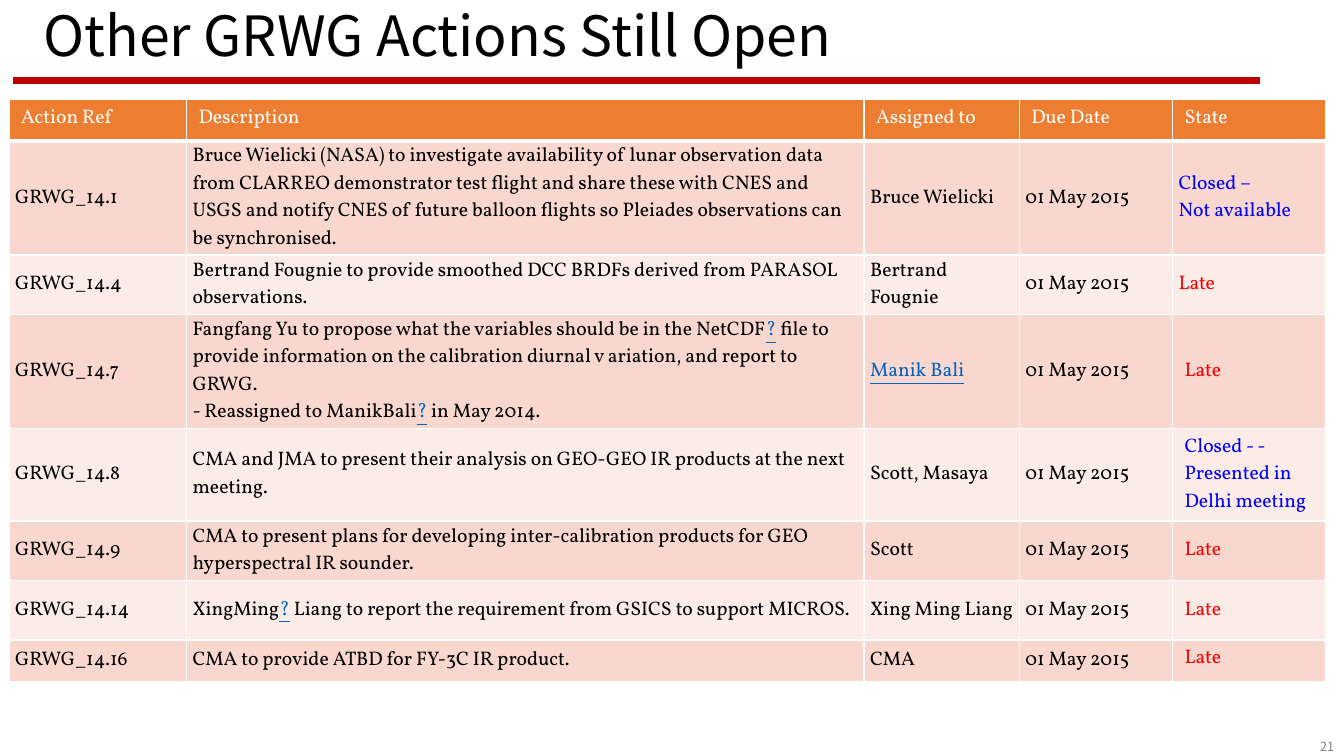
from lxml import etree
from pptx import Presentation
from pptx.dml.color import RGBColor
from pptx.enum.shapes import MSO_CONNECTOR
from pptx.enum.text import MSO_ANCHOR, PP_ALIGN
from pptx.oxml.ns import qn
from pptx.util import Inches, Pt

COLORS = {
    "white": "FFFFFF", "black": "000000", "rule": "C00000", "number": "808080",
    "header": "ED7D31", "odd": "F8D7CE", "even": "FCECE8",
    "link": "0563C1", "closed": "0000FF", "late": "FF0000",
}
SANS, SERIF = "Noto Sans CJK KR", "Vollkorn"
DUE = "01 May 2015"
COLUMN_WIDTHS = [1.76, 6.72, 1.54, 1.52, 1.52]
ROW_HEIGHTS = [0.41, 1.13, 0.59, 1.13, 0.92, 0.59, 0.59, 0.41]
ACTIONS = [
    ("Action Ref", "Description", "Assigned to", "Due Date", "State"),
    ("GRWG_14.1",
     "Bruce Wielicki (NASA) to investigate availability of lunar observation data "
     "from CLARREO demonstrator test flight and share these with CNES and USGS and "
     "notify CNES of future balloon flights so Pleiades observations can be synchronised.",
     "Bruce Wielicki", DUE, "Closed –\nNot available"),
    ("GRWG_14.4",
     "Bertrand Fougnie to provide smoothed DCC BRDFs derived from PARASOL observations.",
     "Bertrand Fougnie", DUE, "Late"),
    ("GRWG_14.7",
     "Fangfang Yu to propose what the variables should be in the NetCDF? file to "
     "provide information on the calibration diurnal v ariation, and report to GRWG. \v"
     "- Reassigned to ManikBali? in May 2014.",
     "Manik Bali", DUE, "Late"),
    ("GRWG_14.8",
     "CMA and JMA to present their analysis on GEO-GEO IR products at the next meeting.",
     "Scott, Masaya", DUE, "Closed - - Presented in Delhi meeting"),
    ("GRWG_14.9",
     "CMA to present plans for developing inter-calibration products for GEO "
     "hyperspectral IR sounder.",
     "Scott", DUE, "Late"),
    ("GRWG_14.14",
     "XingMing? Liang to report the requirement from GSICS to support MICROS.",
     "Xing Ming Liang", DUE, "Late"),
    ("GRWG_14.16", "CMA to provide ATBD for FY-3C IR product.", "CMA", DUE, "Late"),
]


def style(font, name, size, color):
    font.name = name
    font.size = Pt(size)
    font.bold = False
    font.color.rgb = RGBColor.from_string(COLORS[color])


def add_borders(cell, bottom_width):
    properties = cell._tc.get_or_add_tcPr()
    for side, width in (("L", 1), ("R", 1), ("T", 1), ("B", bottom_width)):
        border = etree.SubElement(properties, qn(f"a:ln{side}"), w=str(Pt(width)))
        fill = etree.SubElement(border, qn("a:solidFill"))
        etree.SubElement(fill, qn("a:srgbClr"), val=COLORS["white"])


deck = Presentation()
deck.slide_width = Inches(13.33)
deck.slide_height = Inches(7.5)
page = deck.slides.add_slide(deck.slide_layouts[5])

rule = page.shapes.add_connector(
    MSO_CONNECTOR.STRAIGHT, Inches(0.13), Inches(0.8), Inches(12.5), Inches(0.8))
rule.line.color.rgb = RGBColor.from_string(COLORS["rule"])
rule.line.width = Pt(4.5)
etree.SubElement(rule._element.spPr, qn("a:effectLst"))

title = page.shapes.title
title.left, title.top = Inches(0.33), Inches(0.08)
title.width, title.height = Inches(11.5), Inches(0.6)
title.text_frame.text = "Other GRWG Actions Still Open"
title.text_frame.vertical_anchor = MSO_ANCHOR.MIDDLE
heading = title.text_frame.paragraphs[0]
heading.alignment = PP_ALIGN.LEFT
heading.line_spacing = 0.9
style(heading.font, SANS, 39.6, "black")

number_box = page.shapes.add_textbox(Inches(12.19), Inches(7.28), Inches(1.14), Inches(0.25))
number_box.text_frame.word_wrap = True
number = number_box.text_frame.paragraphs[0]
number.text = "21"
number.alignment = PP_ALIGN.RIGHT
style(number.font, SANS, 9, "number")

table = page.shapes.add_table(
    len(ACTIONS), len(COLUMN_WIDTHS), Inches(0.09), Inches(0.99),
    Inches(sum(COLUMN_WIDTHS)), Inches(sum(ROW_HEIGHTS))).table
for column, width in zip(table.columns, COLUMN_WIDTHS):
    column.width = Inches(width)
for row, height in zip(table.rows, ROW_HEIGHTS):
    row.height = Inches(height)

for row_index, action in enumerate(ACTIONS):
    is_header = row_index == 0
    band = "header" if is_header else "odd" if row_index % 2 else "even"
    for column_index, text in enumerate(action):
        cell = table.cell(row_index, column_index)
        is_state = column_index == 4
        roomy = is_header or is_state and row_index > 2
        cell.margin_left = cell.margin_right = Inches(0.12 if roomy else 0.06)
        cell.margin_top = cell.margin_bottom = Inches(0.05 if roomy else 0.02)
        top_anchored = is_header or is_state and row_index == len(ACTIONS) - 1
        cell.vertical_anchor = MSO_ANCHOR.TOP if top_anchored else MSO_ANCHOR.MIDDLE
        add_borders(cell, 3 if is_header else 1)
        cell.fill.solid()
        cell.fill.fore_color.rgb = RGBColor.from_string(COLORS[band])

        color = "white" if is_header else "black"
        if is_state and not is_header:
            color = "closed" if text.startswith("Closed") else "late"
        for line_index, line in enumerate(text.split("\n")):
            frame = cell.text_frame
            para = frame.add_paragraph() if line_index else frame.paragraphs[0]
            style(para.font, SERIF, 14, color)
            for part in line.replace("?", "|?|").replace("\v", "|\v|").split("|"):
                if part == "\v":
                    para.add_line_break()
                    continue
                span = para.add_run()
                span.text = part
                if part in ("?", "Manik Bali"):
                    span.font.underline = True
                    span.font.color.rgb = RGBColor.from_string(COLORS["link"])

deck.save("out.pptx")
